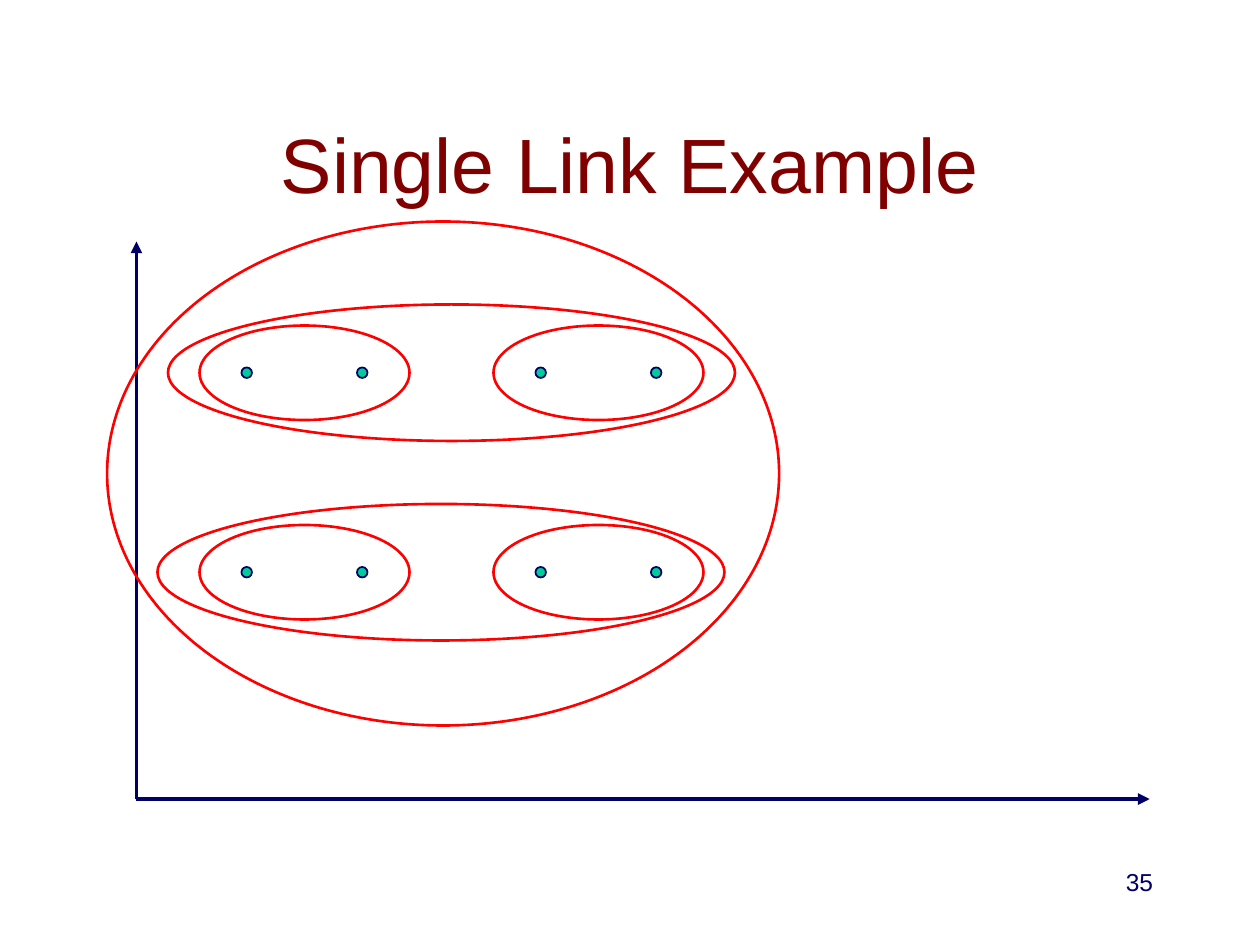
from dataclasses import dataclass

from lxml.etree import SubElement
from pptx import Presentation
from pptx.dml.color import RGBColor as Rgb
from pptx.enum.shapes import MSO_CONNECTOR as Connector, MSO_SHAPE as Shape
from pptx.enum.text import MSO_ANCHOR as Anchor, PP_ALIGN as Align
from pptx.oxml.ns import qn
from pptx.util import Pt

SCALE = 7620  # EMU per px, 120 px to the inch


@dataclass(frozen=True)
class Theme:
    font: str = "Arial"
    title: Rgb = Rgb(0x80, 0x00, 0x00)
    ink: Rgb = Rgb(0x00, 0x00, 0x66)
    point: Rgb = Rgb(0x00, 0xCC, 0x99)
    cluster: Rgb = Rgb(0xFF, 0x00, 0x00)
    title_size: int = 44
    number_size: int = 14
    axis_width: float = 2.25
    cluster_width: float = 1.5
    point_width: float = 1


THEME = Theme()


def px(*lengths):
    return [length * SCALE for length in lengths]


def set_format(target, values):
    for name, value in values.items():
        setattr(target, name, value)


def add_text(page, box, text, align, anchor, size, color):
    frame = page.shapes.add_textbox(*px(*box)).text_frame
    set_format(frame, {"word_wrap": True, "vertical_anchor": anchor})
    para = frame.paragraphs[0]
    para.alignment = align
    span = para.add_run()
    span.text = text
    set_format(span.font, {"name": THEME.font, "size": Pt(size)})
    span.font.color.rgb = color


def add_ellipse(page, box, color, width, fill=None):
    ellipse = page.shapes.add_shape(Shape.OVAL, *px(*box))
    ellipse.shadow.inherit = False
    if fill is None:
        ellipse.fill.background()
    else:
        ellipse.fill.solid()
        ellipse.fill.fore_color.rgb = fill
    ellipse.line.color.rgb = color
    ellipse.line.width = Pt(width)


def add_axes(page, box):
    """Two arrows that start at the lower left corner of the box."""
    left, top, width, height = box
    bottom = top + height
    axes = page.shapes.add_group_shape()
    for end in ((left, top), (left + width, bottom)):
        axis = axes.shapes.add_connector(
            Connector.STRAIGHT, *px(left, bottom, *end))
        axis.line.color.rgb = THEME.ink
        axis.line.width = Pt(THEME.axis_width)
        SubElement(axis.line._get_or_add_ln(), qn("a:tailEnd"), type="triangle")
        SubElement(axis._element.spPr, qn("a:effectLst"))


def add_clusters(page, box):
    """Eight points inside nested clusters, relative to the box around them all."""
    left, top, width, height = box
    row_tops = (99, 289)
    pair_lefts = (88, 368)

    # Points
    for row_top in row_tops:
        for pair_left in pair_lefts:
            for offset in (40, 150):
                add_ellipse(
                    page,
                    (left + pair_left + offset, top + row_top + 40, 10, 10),
                    THEME.ink, THEME.point_width, THEME.point)

    # Pairs, rows of two pairs, and the whole set
    pairs = [(x, y, 200, 90) for y in row_tops for x in pair_lefts]
    rows = [(x, y - 20, 540, 130) for x, y in zip((58, 48), row_tops)]
    for x, y, wide, high in pairs + rows + [(0, 0, width, height)]:
        add_ellipse(page, (left + x, top + y, wide, high),
                    THEME.cluster, THEME.cluster_width)


def main():
    deck = Presentation()
    deck.slide_width, deck.slide_height = px(1200, 900)
    page = deck.slides.add_slide(deck.slide_layouts[6])

    add_text(page, (90, 80, 1020, 150), "Single Link Example",
             Align.CENTER, Anchor.MIDDLE, THEME.title_size, THEME.title)
    add_axes(page, (130, 230, 965, 531))
    add_clusters(page, (102, 211, 640, 480))
    add_text(page, (860, 820, 250, 60), "35",
             Align.RIGHT, Anchor.TOP, THEME.number_size, THEME.ink)

    deck.save("out.pptx")


if __name__ == "__main__":
    main()
